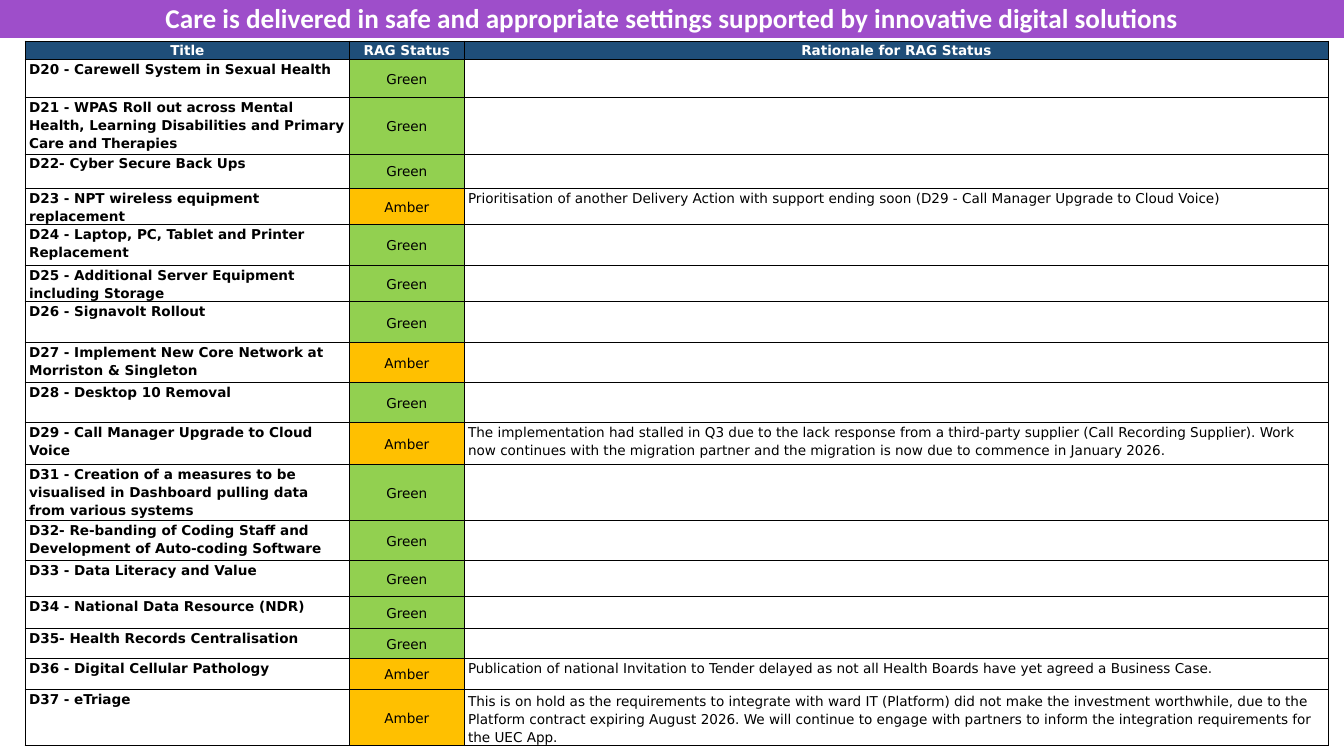
from dataclasses import dataclass

from lxml.etree import SubElement
from pptx import Presentation
from pptx.dml.color import RGBColor
from pptx.enum.shapes import MSO_SHAPE
from pptx.enum.text import MSO_ANCHOR, MSO_AUTO_SIZE, PP_ALIGN
from pptx.oxml.ns import qn
from pptx.slide import Slide
from pptx.table import _Cell as Cell
from pptx.util import Cm, Pt

BLACK = RGBColor(0x00, 0x00, 0x00)
WHITE = RGBColor(0xFF, 0xFF, 0xFF)
PURPLE = RGBColor(0x9E, 0x4E, 0xCA)
NAVY = RGBColor(0x1F, 0x4E, 0x79)
STATUS_FILLS = {
    "Green": RGBColor(0x92, 0xD0, 0x50),
    "Amber": RGBColor(0xFF, 0xC0, 0x00),
}

HEADING = "Care is delivered in safe and appropriate settings supported by innovative digital solutions"
COLUMN_TITLES = ("Title", "RAG Status", "Rationale for RAG Status")
COLUMN_WIDTHS = (13.49, 4.75, 35.94)
HEADER_HEIGHT = 0.76


@dataclass(frozen=True)
class Action:
    title: str
    status: str
    height: float
    rationale: str = ""
    rationale_anchor: MSO_ANCHOR = MSO_ANCHOR.TOP


ACTIONS = [
    Action("D20 - Carewell System in Sexual Health", "Green", 1.6),
    Action("D21 - WPAS Roll out across Mental Health, Learning Disabilities and Primary "
           "Care and Therapies", "Green", 2.34),
    Action("D22- Cyber Secure Back Ups", "Green", 1.42),
    Action("D23 - NPT wireless equipment replacement", "Amber", 1.52,
           "Prioritisation of another Delivery Action with support ending soon "
           "(D29 - Call Manager Upgrade to Cloud Voice)"),
    Action("D24 - Laptop, PC, Tablet and Printer Replacement", "Green", 1.68),
    Action("D25 - Additional Server Equipment including Storage", "Green", 1.52),
    Action("D26 - Signavolt Rollout", "Green", 1.7),
    Action("D27 - Implement New Core Network at Morriston & Singleton", "Amber", 1.65),
    Action("D28 - Desktop 10 Removal", "Green", 1.68),
    Action("D29 - Call Manager Upgrade to Cloud Voice", "Amber", 1.73,
           "The implementation had stalled in Q3 due to the lack response from a third-party "
           "supplier (Call Recording Supplier). Work now continues with the migration partner "
           "and the migration is now due to commence in January 2026."),
    Action("D31 - Creation of a measures to be visualised in Dashboard pulling data from "
           "various systems", "Green", 2.34),
    Action("D32- Re-banding of Coding Staff and Development of Auto-coding Software",
           "Green", 1.65),
    Action("D33 - Data Literacy and Value", "Green", 1.5),
    Action("D34 - National Data Resource (NDR)", "Green", 1.32),
    Action("D35- Health Records Centralisation", "Green", 1.27),
    Action("D36 - Digital Cellular Pathology", "Amber", 1.27,
           "Publication of national Invitation to Tender delayed as not all Health Boards "
           "have yet agreed a Business Case."),
    Action("D37 - eTriage", "Amber", 2.34,
           "This is on hold as the requirements to integrate with ward IT (Platform) did not make "
           "the investment worthwhile, due to the Platform contract expiring August 2026. We "
           "will continue to engage with partners to inform the integration requirements for the "
           "UEC App.", MSO_ANCHOR.BOTTOM),
]


def add_borders(cell: Cell) -> None:
    properties = cell._tc.get_or_add_tcPr()
    for side in ("a:lnL", "a:lnR", "a:lnT", "a:lnB"):
        line = SubElement(properties, qn(side), w=str(Pt(1)))
        SubElement(SubElement(line, qn("a:solidFill")), qn("a:srgbClr"), val=str(BLACK))


def fill_cell(cell: Cell, text: str, fill: RGBColor, color: RGBColor = BLACK,
              bold: bool = False, align: PP_ALIGN = PP_ALIGN.LEFT,
              anchor: MSO_ANCHOR = MSO_ANCHOR.TOP, inset: float = 0.17) -> None:
    add_borders(cell)
    cell.fill.solid()
    cell.fill.fore_color.rgb = fill
    cell.margin_left = cell.margin_right = Cm(inset)
    cell.margin_top = cell.margin_bottom = 0
    cell.vertical_anchor = anchor
    cell.text = text
    para = cell.text_frame.paragraphs[0]
    para.alignment = align
    para.line_spacing = 1.15
    para.space_after = Pt(8)
    para.font.name = "DejaVu Sans"
    para.font.size = Pt(16)
    para.font.bold = bold
    para.font.color.rgb = color


def add_status_table(page: Slide) -> None:
    heights = [HEADER_HEIGHT] + [action.height for action in ACTIONS]
    table = page.shapes.add_table(
        len(heights), len(COLUMN_WIDTHS), Cm(1.04), Cm(1.7),
        Cm(sum(COLUMN_WIDTHS)), Cm(sum(heights))).table
    table.first_row = table.horz_banding = False
    for column, width in zip(table.columns, COLUMN_WIDTHS):
        column.width = Cm(width)
    for row, height in zip(table.rows, heights):
        row.height = Cm(height)

    for index, title in enumerate(COLUMN_TITLES):
        fill_cell(table.cell(0, index), title, NAVY, WHITE, True,
                  PP_ALIGN.CENTER, MSO_ANCHOR.MIDDLE, inset=0.12)
    for index, action in enumerate(ACTIONS, start=1):
        fill_cell(table.cell(index, 0), action.title, WHITE, bold=True)
        fill_cell(table.cell(index, 1), action.status, STATUS_FILLS[action.status],
                  align=PP_ALIGN.CENTER, anchor=MSO_ANCHOR.MIDDLE)
        fill_cell(table.cell(index, 2), action.rationale, WHITE,
                  anchor=action.rationale_anchor)


def add_heading(page: Slide, width: Cm) -> None:
    banner = page.shapes.add_shape(MSO_SHAPE.RECTANGLE, 0, Cm(-0.05), width, Cm(1.63))
    banner.shadow.inherit = False
    banner.fill.solid()
    banner.fill.fore_color.rgb = PURPLE
    banner.line.fill.background()
    frame = banner.text_frame
    frame.word_wrap = True
    frame.auto_size = MSO_AUTO_SIZE.SHAPE_TO_FIT_TEXT
    frame.vertical_anchor = MSO_ANCHOR.TOP
    para = frame.paragraphs[0]
    para.text = HEADING
    para.alignment = PP_ALIGN.CENTER
    para.space_after = Pt(19.8)
    para.font.name = "Calibri"
    para.font.size = Pt(32)
    para.font.bold = True
    para.font.color.rgb = WHITE


def main() -> None:
    deck = Presentation()
    deck.slide_width = Cm(55.85)
    deck.slide_height = Cm(31.42)
    page = deck.slides.add_slide(deck.slide_layouts[6])
    add_status_table(page)
    add_heading(page, deck.slide_width)
    deck.save("out.pptx")


if __name__ == "__main__":
    main()
